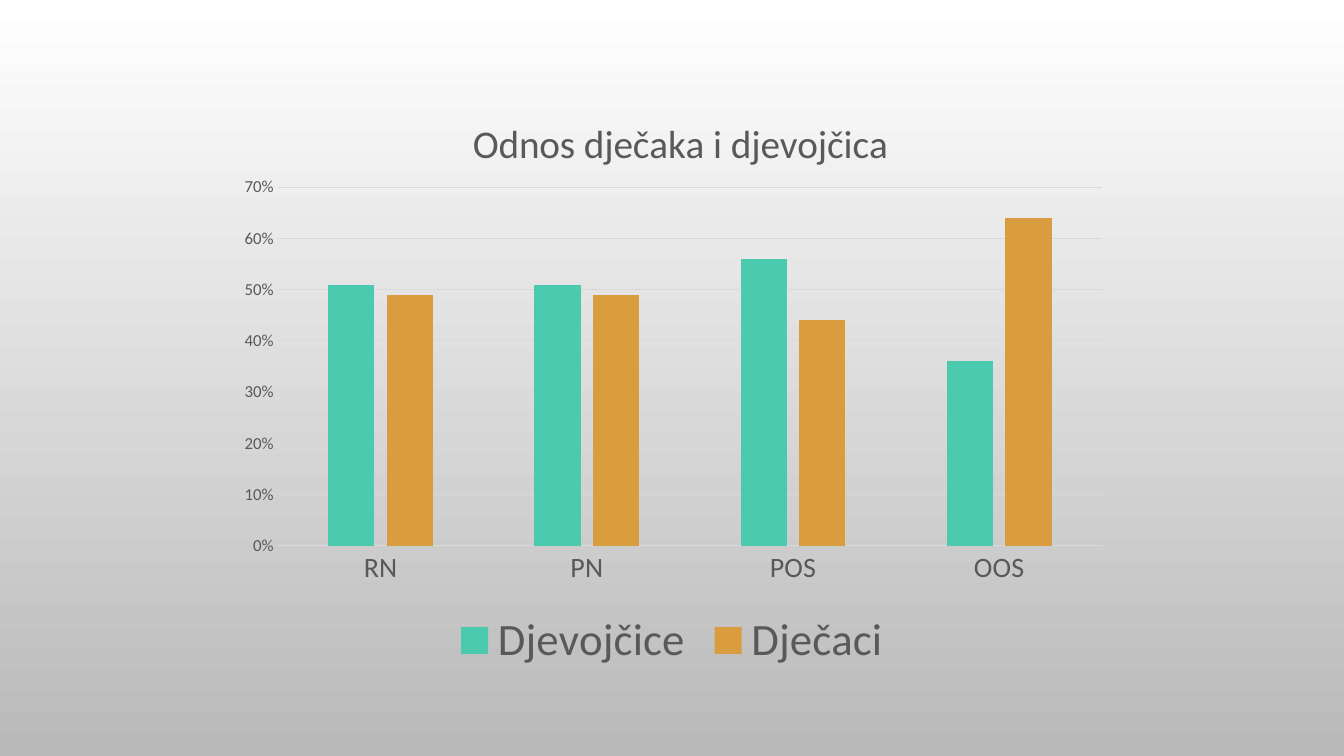
from pptx import Presentation
from pptx.chart.data import CategoryChartData
from pptx.dml.color import RGBColor
from pptx.enum.chart import XL_CHART_TYPE, XL_LEGEND_POSITION, XL_TICK_MARK
from pptx.oxml import parse_xml
from pptx.oxml.ns import nsdecls, qn
from pptx.util import Inches, Pt

COLUMNS = XL_CHART_TYPE.COLUMN_CLUSTERED
BOTTOM = XL_LEGEND_POSITION.BOTTOM
NO_TICK = XL_TICK_MARK.NONE


def rgb(value):
    return RGBColor.from_string(value)


def set_all(target, values):
    for name, value in values.items():
        setattr(target, name, value)


def place(element, index, **fractions):
    """Give a chart part a fixed place, in fractions of the chart's size."""
    for old in element.findall(qn("c:layout")):
        element.remove(old)
    inner = '<c:layoutTarget val="inner"/>' if "w" in fractions else ""
    modes = "".join(f'<c:{key}Mode val="edge"/>' for key in "xy")
    sizes = "".join(f'<c:{key} val="{value}"/>' for key, value in fractions.items())
    element.insert(index, parse_xml(
        f'<c:layout {nsdecls("c")}><c:manualLayout>{inner}{modes}{sizes}'
        "</c:manualLayout></c:layout>"))


class SlideBuilder:
    font_name = "Calibri"
    text_color = "595959"
    line_color = "D9D9D9"

    def __init__(self, slide):
        self.slide = slide

    def style_font(self, font, size):
        set_all(font, {"name": self.font_name, "size": Pt(size), "bold": False})
        font.color.rgb = rgb(self.text_color)

    def style_line(self, line):
        line.color.rgb = rgb(self.line_color)
        line.width = Pt(0.75)

    def background(self, colors):
        fill = self.slide.background.fill
        fill.gradient()
        fill.gradient_angle = 270
        for stop, color in zip(fill.gradient_stops, colors):
            stop.color.rgb = rgb(color)

    def column_chart(self, box, title, categories, series):
        data = CategoryChartData(number_format="0%")
        data.categories = categories
        for name, values, _ in series:
            data.add_series(name, values)
        frame = self.slide.shapes.add_chart(COLUMNS, *map(Inches, box), data)
        chart = frame.chart
        self.style_font(chart.font, 10)

        # Columns
        plot = chart.plots[0]
        set_all(plot, {"gap_width": 219, "overlap": -27, "vary_by_categories": False})
        for columns, (_, _, color) in zip(plot.series, series):
            columns.format.fill.solid()
            columns.format.fill.fore_color.rgb = rgb(color)

        # Title
        chart.has_title = True
        heading = chart.chart_title.text_frame
        heading.text = title
        self.style_font(heading.paragraphs[0].runs[0].font, 28)

        # Axes
        ticks = {"major_tick_mark": NO_TICK, "minor_tick_mark": NO_TICK}
        for axis, size in ((chart.category_axis, 20), (chart.value_axis, 12)):
            set_all(axis, ticks)
            self.style_font(axis.tick_labels.font, size)
        self.style_line(chart.category_axis.format.line)
        shares = chart.value_axis
        set_all(shares, {"minimum_scale": 0, "maximum_scale": 0.7, "major_unit": 0.1,
                         "has_major_gridlines": True})
        set_all(shares.tick_labels, {"number_format": "0%",
                                     "number_format_is_linked": False})
        shares.format.line.fill.background()
        self.style_line(shares.major_gridlines.format.line)

        # Legend
        chart.has_legend = True
        set_all(chart.legend, {"position": BOTTOM, "include_in_layout": False})
        self.style_font(chart.legend.font, 32)

        # Places of title and plot
        title_part, = chart.element.xpath("c:chart/c:title")
        plot_part, = chart.element.xpath("c:chart/c:plotArea")
        place(title_part, 1, x=0.27, y=0.05)
        place(plot_part, 0, x=0.06, y=0.18, w=0.92, h=0.6)


def main():
    prs = Presentation()
    set_all(prs, {"slide_width": Inches(13.33), "slide_height": Inches(7.5)})
    builder = SlideBuilder(prs.slides.add_slide(prs.slide_layouts[6]))
    builder.background(("FFFFFF", "B9B9B9"))
    builder.column_chart(
        (2.22, 0.79, 8.89, 5.93),
        "Odnos dječaka i djevojčica",
        ("RN", "PN", "POS", "OOS"),
        (("Djevojčice", (0.51, 0.51, 0.56, 0.36), "4BCAAD"),
         ("Dječaci", (0.49, 0.49, 0.44, 0.64), "D99C3F")),
    )
    prs.save("out.pptx")


if __name__ == "__main__":
    main()
